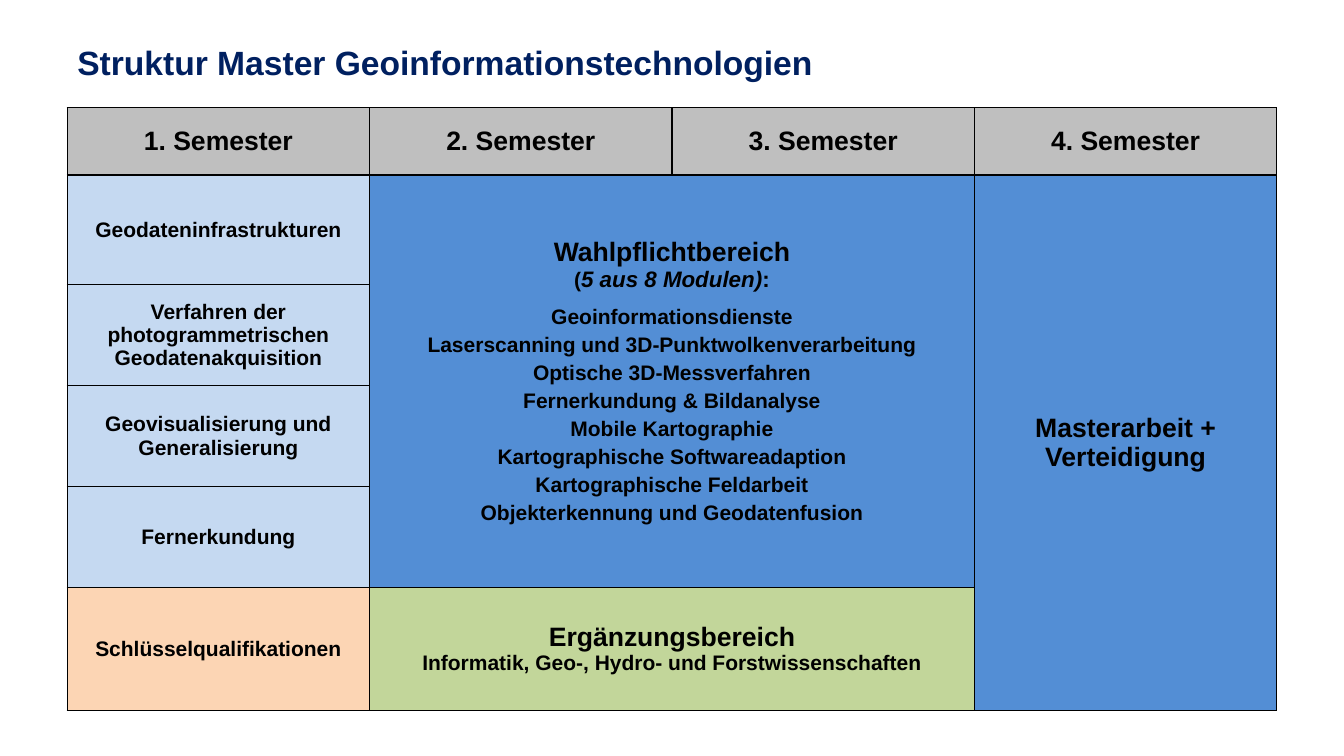
from dataclasses import dataclass

import lxml.etree
import pptx
import pptx.dml.color
import pptx.enum.text
import pptx.oxml.ns
import pptx.util

Pt = pptx.util.Pt
FONT = "Arial"
BLACK, NAVY = "000000", "002060"
GREY, LIGHT_BLUE, BLUE = "BFBFBF", "C5D9F1", "538ED5"
ORANGE, GREEN = "FCD5B4", "C2D69A"
HEADING, BODY = 19, 15

LEFT, TABLE_TOP = 48, 77
COLUMN_WIDTH = 216
ROW_HEIGHTS = [48, 78.5, 72, 72, 72, 88]


@dataclass
class Run:
    text: str
    size: float | None = None
    italic: bool = False
    break_after: bool = False


@dataclass
class Line:
    runs: list[Run]
    size: float
    before: float = 4
    after: float = 0
    spacing: float | None = None


@dataclass
class Block:
    row: int
    column: int
    colour: str
    lines: list[Line]
    row_span: int = 1
    column_span: int = 1


def rgb(colour: str) -> pptx.dml.color.RGBColor:
    return pptx.dml.color.RGBColor.from_string(colour)


def label(text: str, size: float) -> list[Line]:
    """One paragraph in a single size."""
    return [Line([Run(text)], size)]


def set_font(font, size: float, colour: str) -> None:
    font.name = FONT
    font.size = Pt(size)
    font.bold = True
    font.color.rgb = rgb(colour)


def write_line(paragraph, line: Line) -> None:
    paragraph.alignment = pptx.enum.text.PP_ALIGN.CENTER
    paragraph.space_before = Pt(line.before)
    paragraph.space_after = Pt(line.after)
    if line.spacing:
        paragraph.line_spacing = Pt(line.spacing)
    set_font(paragraph.font, line.size, BLACK)
    for part in line.runs:
        run = paragraph.add_run()
        run.text = part.text
        if part.size:
            run.font.size = Pt(part.size)
        if part.italic:
            run.font.italic = True
        if part.break_after:
            paragraph.add_line_break()


def add_borders(cell) -> None:
    properties = cell._tc.get_or_add_tcPr()
    for position, side in enumerate(("lnL", "lnR", "lnT", "lnB")):
        border = lxml.etree.Element(pptx.oxml.ns.qn(f"a:{side}"), w=str(Pt(1)))
        fill = lxml.etree.SubElement(border, pptx.oxml.ns.qn("a:solidFill"))
        lxml.etree.SubElement(fill, pptx.oxml.ns.qn("a:srgbClr"), val=BLACK)
        properties.insert(position, border)


def fill_block(table, block: Block) -> None:
    cell = table.cell(block.row, block.column)
    if block.row_span > 1 or block.column_span > 1:
        cell.merge(table.cell(block.row + block.row_span - 1,
                              block.column + block.column_span - 1))
    cell.fill.solid()
    cell.fill.fore_color.rgb = rgb(block.colour)
    cell.vertical_anchor = pptx.enum.text.MSO_ANCHOR.MIDDLE
    cell.margin_left = cell.margin_right = Pt(5)
    cell.margin_top = cell.margin_bottom = 0
    frame = cell.text_frame
    for index, line in enumerate(block.lines):
        write_line(frame.add_paragraph() if index else frame.paragraphs[0], line)


ELECTIVES = [
    "Geoinformationsdienste",
    "Laserscanning und 3D-Punktwolkenverarbeitung",
    "Optische 3D-Messverfahren",
    "Fernerkundung & Bildanalyse",
    "Mobile Kartographie",
    "Kartographische Softwareadaption",
    "Kartographische Feldarbeit",
    "Objekterkennung und Geodatenfusion",
]
FIRST_SEMESTER = [
    "Geodateninfrastrukturen",
    "Verfahren der photogrammetrischen Geodatenakquisition",
    "Geovisualisierung und Generalisierung",
    "Fernerkundung",
]

elective_heading = Line(
    [Run("Wahlpflichtbereich", break_after=True), Run("(", BODY),
     Run("5 aus 8 Modulen)", 16, italic=True), Run(":", 16)],
    HEADING, after=6)
elective_lines = [Line([Run(module)], BODY, before=0, spacing=20)
                  for module in ELECTIVES]
supplement = Line(
    [Run("Ergänzungsbereich", break_after=True),
     Run("Informatik, Geo-, Hydro- und Forstwissenschaften", BODY)], HEADING)

BLOCKS = [
    *(Block(0, column, GREY, label(f"{column + 1}. Semester", HEADING))
      for column in range(4)),
    *(Block(row, 0, LIGHT_BLUE, label(module, BODY))
      for row, module in enumerate(FIRST_SEMESTER, start=1)),
    Block(1, 1, BLUE, [elective_heading, *elective_lines],
          row_span=4, column_span=2),
    Block(1, 3, BLUE, label("Masterarbeit + Verteidigung", HEADING), row_span=5),
    Block(5, 0, ORANGE, label("Schlüsselqualifikationen", BODY)),
    Block(5, 1, GREEN, [supplement], column_span=2),
]


def add_title(slide) -> None:
    title = slide.shapes.title
    title.left, title.top, title.width, title.height = Pt(LEFT), Pt(21.5), Pt(864), Pt(45)
    title.text_frame.text = "Struktur Master Geoinformationstechnologien"
    title.text_frame.vertical_anchor = pptx.enum.text.MSO_ANCHOR.MIDDLE
    heading = title.text_frame.paragraphs[0]
    heading.alignment = pptx.enum.text.PP_ALIGN.LEFT
    set_font(heading.font, 24, NAVY)


def add_curriculum(slide) -> None:
    table = slide.shapes.add_table(
        len(ROW_HEIGHTS), 4, Pt(LEFT), Pt(TABLE_TOP),
        Pt(4 * COLUMN_WIDTH), Pt(sum(ROW_HEIGHTS))).table
    table.first_row = table.horz_banding = False
    for column in table.columns:
        column.width = Pt(COLUMN_WIDTH)
    for row, height in zip(table.rows, ROW_HEIGHTS):
        row.height = Pt(height)
    for block in BLOCKS:
        fill_block(table, block)
    for cell in table.iter_cells():
        add_borders(cell)


def main() -> None:
    presentation = pptx.Presentation()
    presentation.slide_width, presentation.slide_height = Pt(960), Pt(540)
    slide = presentation.slides.add_slide(presentation.slide_layouts[5])
    add_title(slide)
    add_curriculum(slide)
    presentation.save("out.pptx")


if __name__ == "__main__":
    main()
